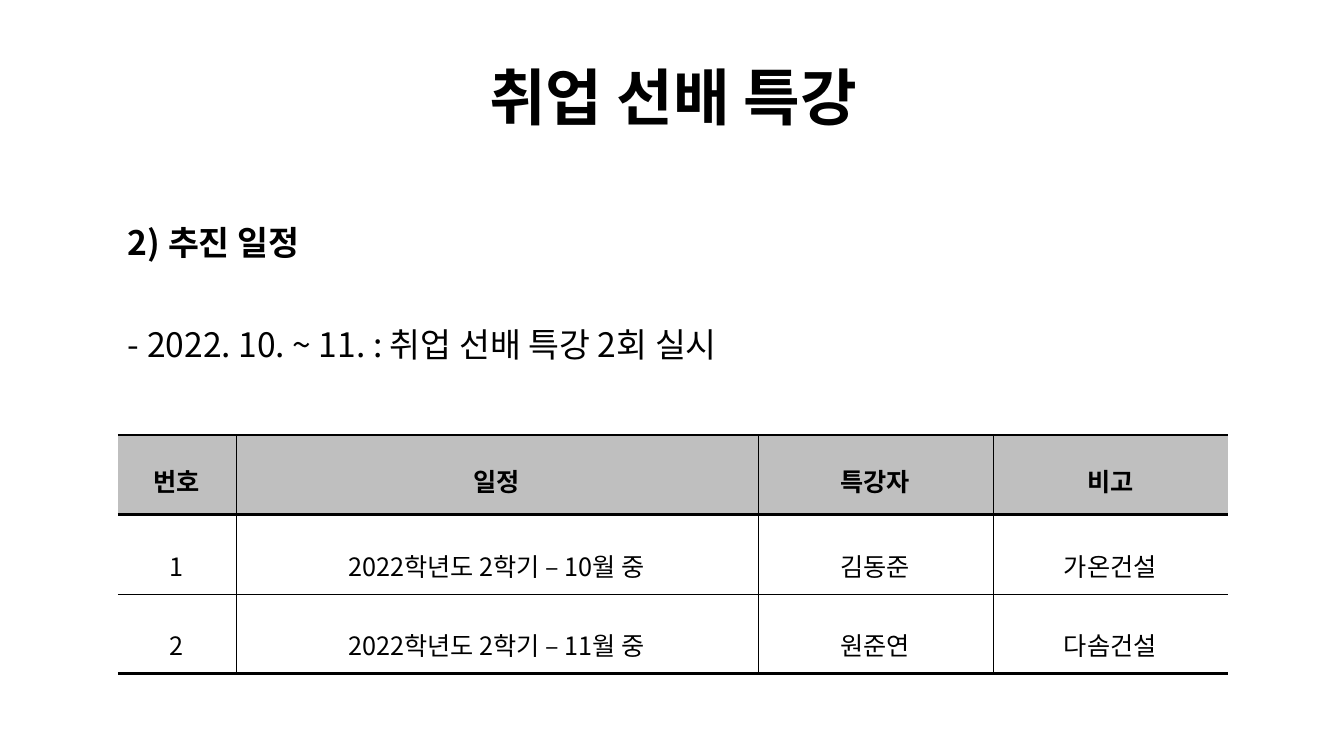
from pptx import Presentation
from pptx.dml.color import RGBColor
from pptx.enum.text import MSO_ANCHOR, MSO_AUTO_SIZE, PP_ALIGN
from pptx.oxml.ns import qn
from pptx.util import Cm, Pt
from lxml.etree import SubElement

TITLE = "취업 선배 특강"
BODY = [  # text, bold, space before in points
    ("2) 추진 일정", True, 10),
    ("- 2022. 10. ~ 11. : 취업 선배 특강 2회 실시", False, 47),
]
SCHEDULE = [
    ("번호", "일정", "특강자", "비고"),
    ("1", "2022학년도 2학기 – 10월 중", "김동준", "가온건설"),
    ("2", "2022학년도 2학기 – 11월 중", "원준연", "다솜건설"),
]
COL_WIDTHS = (2.97, 13.16, 5.92, 5.92)
ROW_HEIGHT = 2
ROW_RULES = (1.7, 1.98, 0.28, 1.7)  # line widths from top to bottom
COL_RULES = (0, 0.28, 0.28, 0.28, 0)  # line widths from left to right

FONT = "Noto Sans CJK KR"
BLACK = RGBColor(0x00, 0x00, 0x00)
WHITE = RGBColor(0xFF, 0xFF, 0xFF)
GRAY = RGBColor(0xBF, 0xBF, 0xBF)


def format_paragraph(p, size, bold, align, spacing):
    p.alignment = align
    p.line_spacing = spacing
    for r in p.runs:
        font = r.font
        font.name, font.size, font.bold = FONT, Pt(size), bold
        font.color.rgb = BLACK
        SubElement(r._r.get_or_add_rPr(), qn("a:ea"), typeface=FONT)


def place(sp, left, top, width, height, anchor):
    sp.left, sp.top, sp.width, sp.height = map(Cm, (left, top, width, height))
    tf = sp.text_frame
    tf.word_wrap = True
    tf.auto_size = MSO_AUTO_SIZE.NONE
    tf.vertical_anchor = anchor
    return tf


def set_borders(cell, **widths):
    """Draw the cell's sides; a width of 0 hides the side."""
    tcPr = cell._tc.get_or_add_tcPr()
    for i, side in enumerate("LRTB"):
        ln = SubElement(tcPr, qn(f"a:ln{side}"), w=str(Pt(widths[side])))
        if widths[side]:
            fill = SubElement(ln, qn("a:solidFill"))
            SubElement(fill, qn("a:srgbClr"), val=str(BLACK))
        else:
            SubElement(ln, qn("a:noFill"))
        tcPr.insert(i, ln)


def add_schedule(slide, left, top):
    frame = slide.shapes.add_table(
        len(SCHEDULE), len(COL_WIDTHS), Cm(left), Cm(top),
        Cm(sum(COL_WIDTHS)), Cm(ROW_HEIGHT * len(SCHEDULE)))
    table = frame.table
    table.first_row = table.horz_banding = False
    for column, width in zip(table.columns, COL_WIDTHS):
        column.width = Cm(width)
    for i, texts in enumerate(SCHEDULE):
        table.rows[i].height = Cm(ROW_HEIGHT)
        header = i == 0
        for j, text in enumerate(texts):
            cell = table.cell(i, j)
            cell.text_frame.text = text
            cell.vertical_anchor = MSO_ANCHOR.MIDDLE
            cell.margin_left = cell.margin_right = Cm(0.05)
            cell.margin_top = cell.margin_bottom = Cm(0.05)
            cell.fill.solid()
            cell.fill.fore_color.rgb = GRAY if header else WHITE
            format_paragraph(cell.text_frame.paragraphs[0], 18, header,
                             PP_ALIGN.CENTER, 1.3 if header else 1.6)
            set_borders(cell, L=COL_RULES[j], R=COL_RULES[j + 1],
                        T=ROW_RULES[i], B=ROW_RULES[i + 1])


def main():
    prs = Presentation()
    prs.slide_width, prs.slide_height = Cm(33.87), Cm(19.05)
    slide = prs.slides.add_slide(prs.slide_layouts[0])
    title, body = slide.placeholders

    tf = place(title, 4.27, 0.74, 25.4, 2.77, MSO_ANCHOR.BOTTOM)
    tf.text = TITLE
    format_paragraph(tf.paragraphs[0], 44, True, PP_ALIGN.CENTER, 0.9)

    tf = place(body, 2.97, 5.59, 27.97, 12.88, MSO_ANCHOR.TOP)
    tf.text = "\n".join(text for text, _, _ in BODY)
    for p, (_, bold, before) in zip(tf.paragraphs, BODY):
        p.space_before = Pt(before)
        format_paragraph(p, 24, bold, PP_ALIGN.LEFT, 0.9)

    add_schedule(slide, 2.97, 10.97)
    prs.save("out.pptx")


if __name__ == "__main__":
    main()
